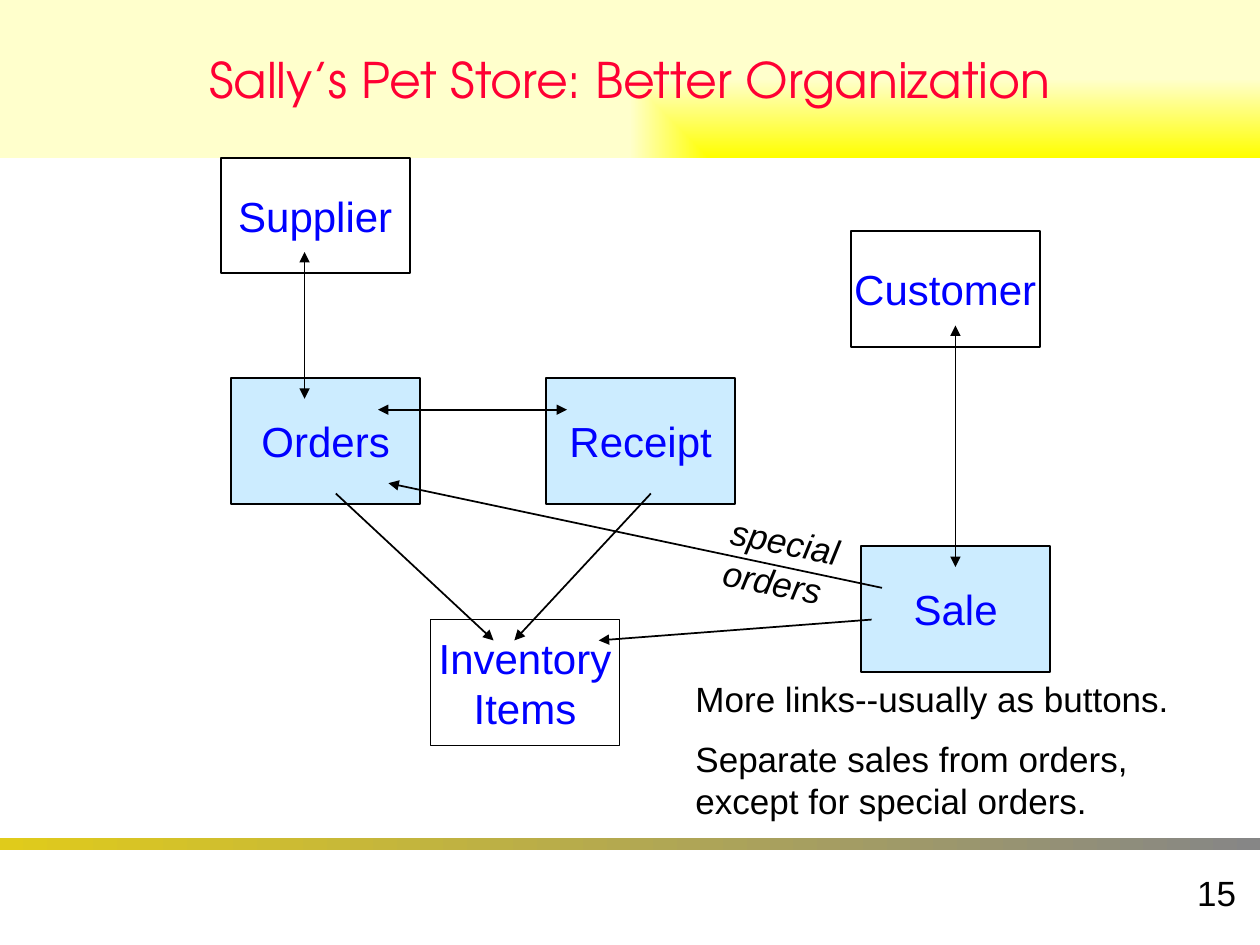
from lxml.etree import SubElement
from pptx import Presentation
from pptx.dml.color import RGBColor
from pptx.enum.shapes import MSO_CONNECTOR, MSO_SHAPE
from pptx.enum.text import MSO_ANCHOR, PP_ALIGN
from pptx.oxml.ns import qn
from pptx.util import Cm, Pt

TITLE = "Sally’s Pet Store: Better Organization"
NUMBER = "15"
SPECIAL = ["special", "orders"]
NOTES = ["More links--usually as buttons.",
         "Separate sales from orders, except for special orders."]

BLACK, BLUE, RED, PALE = "000000", "0000FF", "FF0033", "CCECFF"
BOX_W, FORM_H, LIST_H = 3.81, 2.54, 2.33
BOXES = [
    (["Orders"], 4.66, 7.62, FORM_H, PALE),
    (["Receipt"], 11.01, 7.62, FORM_H, PALE),
    (["Sale"], 17.36, 11.01, FORM_H, PALE),
    (["Supplier"], 4.45, 3.18, LIST_H, None),
    (["Customer"], 17.15, 4.66, LIST_H, None),
    (["Inventory", "Items"], 8.68, 12.49, FORM_H, None),
]
BOTH, END = ("headEnd", "tailEnd"), ("tailEnd",)
LINKS = [
    ((11.43, 8.26), (7.62, 8.26), BOTH),
    ((17.78, 11.85), (7.83, 9.74), END),
    ((6.14, 8.04), (6.14, 5.08), BOTH),
    ((19.26, 11.43), (19.26, 6.56), BOTH),
    ((6.77, 9.95), (9.95, 12.91), END),
    ((13.12, 9.95), (10.37, 12.91), END),
    ((17.57, 12.49), (12.07, 12.91), END),
]


def rgb(code):
    return RGBColor.from_string(code)


def add_rect(s, x, y, w, h, fill=None):
    sp = s.shapes.add_shape(MSO_SHAPE.RECTANGLE, Cm(x), Cm(y), Cm(w), Cm(h))
    sp.shadow.inherit = False
    sp.line.fill.background()
    if fill:
        sp.fill.solid()
        sp.fill.fore_color.rgb = rgb(fill)
    else:
        sp.fill.background()
    return sp


def set_gradient(sp, colors):
    sp.fill.gradient()
    sp.fill.gradient_angle = 0
    for stop, position, color in zip(sp.fill.gradient_stops, (0, 1), colors):
        stop.position = position
        stop.color.rgb = rgb(color)


def set_corner_gradient(sp, colors):
    set_gradient(sp, colors)
    grad = sp.fill._xPr.find(qn("a:gradFill"))
    grad.remove(grad.find(qn("a:lin")))
    path = SubElement(grad, qn("a:path"), {"path": "rect"})
    SubElement(path, qn("a:fillToRect"), {"l": "100000", "t": "100000"})


def write(sp, lines, size, color=BLACK, font="Arial", align=PP_ALIGN.LEFT,
          anchor=MSO_ANCHOR.TOP, wrap=False, italic=False, before=0):
    tf = sp.text_frame
    tf.word_wrap = wrap
    tf.vertical_anchor = anchor
    for i, line in enumerate(lines):
        p = tf.add_paragraph() if i else tf.paragraphs[0]
        p.alignment = align
        p.space_before = Pt(before)
        r = p.add_run()
        r.text = line
        r.font.size = Pt(size)
        r.font.name = font
        r.font.italic = italic
        r.font.color.rgb = rgb(color)


def add_text(s, x, y, w, h, lines, **style):
    sp = s.shapes.add_textbox(Cm(x), Cm(y), Cm(w), Cm(h))
    write(sp, lines, 20, **style)
    return sp


def add_link(s, start, end, heads):
    c = s.shapes.add_connector(MSO_CONNECTOR.STRAIGHT, *map(Cm, start + end))
    c.line.color.rgb = rgb(BLACK)
    c.line.width = Pt(1)
    for head in heads:
        SubElement(c.line._get_or_add_ln(), qn("a:" + head), {"type": "triangle"})
    SubElement(c._element.spPr, qn("a:effectLst"))


def main():
    """Build the pet store form diagram and save it."""
    prs = Presentation()
    prs.slide_width, prs.slide_height = Cm(25.4), Cm(19.05)
    s = prs.slides.add_slide(prs.slide_layouts[6])

    set_gradient(add_rect(s, 0, 16.89, 25.4, 0.25), ("E0CB1B", "868686"))
    title = add_rect(s, 0, 0, 25.4, 3.18)
    set_corner_gradient(title, ("FFFF00", "FFFFCC"))
    write(title, [TITLE], 28, RED, "TeX Gyre Adventor", PP_ALIGN.CENTER,
          MSO_ANCHOR.MIDDLE, wrap=True)
    add_text(s, 19.89, 17.35, 5.28, 1.27, [NUMBER],
             align=PP_ALIGN.RIGHT, anchor=MSO_ANCHOR.MIDDLE)

    for lines, x, y, h, fill in BOXES:
        sp = add_rect(s, x, y, BOX_W, h, fill)
        sp.line.color.rgb = rgb(BLACK)
        sp.line.width = Pt(1)
        write(sp, lines, 24, BLUE, align=PP_ALIGN.CENTER, anchor=MSO_ANCHOR.MIDDLE)
    for link in LINKS:
        add_link(s, *link)

    add_text(s, 14.4, 10.36, 2.72, 1.96, SPECIAL, italic=True).rotation = 11.2
    add_text(s, 13.77, 13.54, 10.36, 3.23, NOTES, wrap=True, before=10)
    prs.save("out.pptx")


if __name__ == "__main__":
    main()
